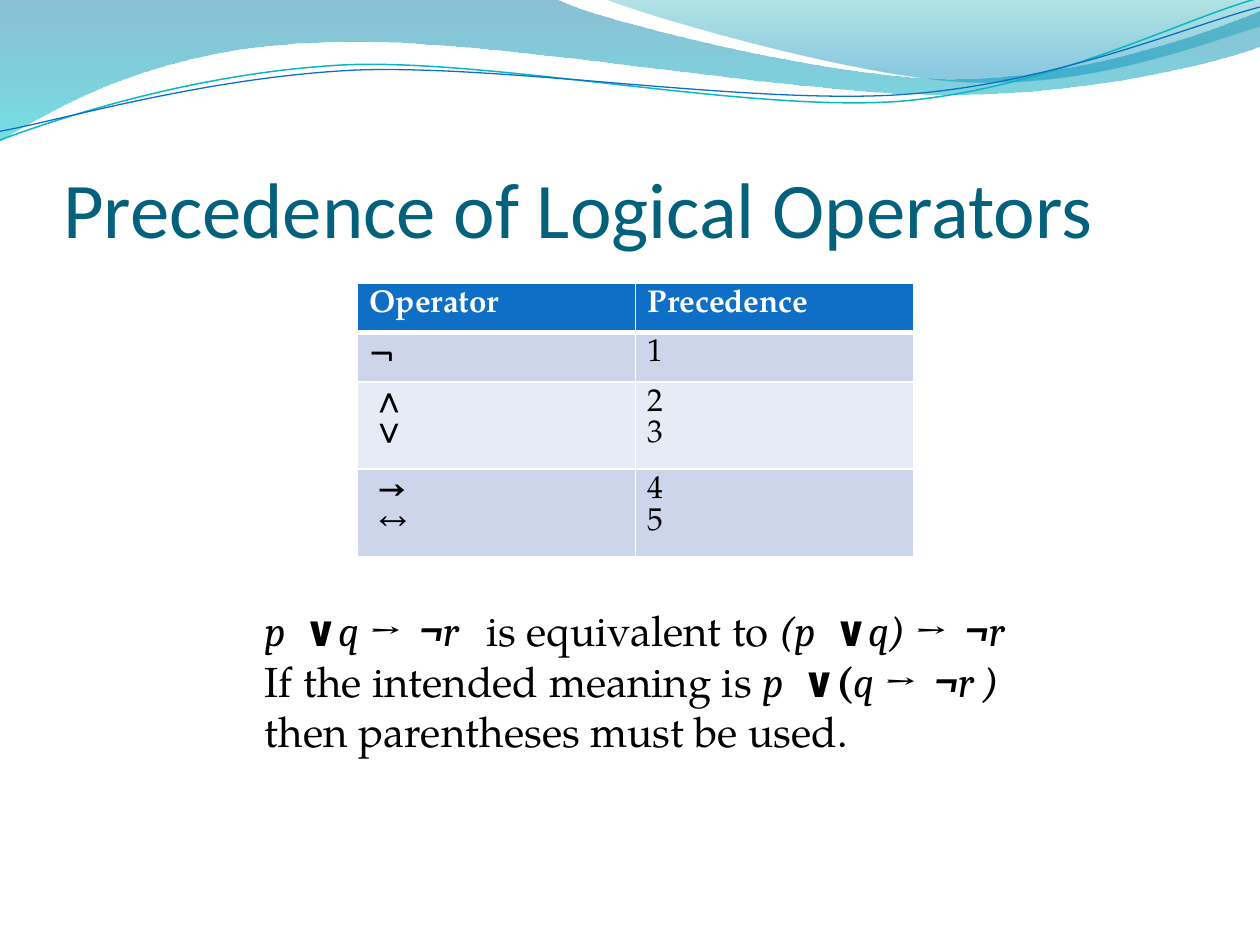
from lxml.etree import Element, SubElement
from pptx import Presentation
from pptx.dml.color import RGBColor
from pptx.enum.text import MSO_ANCHOR, PP_ALIGN
from pptx.oxml import parse_xml
from pptx.oxml.ns import nsdecls, qn
from pptx.util import Pt

SERIF, MATH, SANS = "TeX Gyre Pagella", "Cambria", "Calibri"
WHITE, BLACK, BLUE = "FFFFFF", "000000", "0F6FC6"

BROAD_WAVE = [
    [(0, 0)], [(317, -1)],
    [(343, 12), (478, 45), (546, 45)], [(614, 45), (690, 19), (720, 6)],
    [(721, 26)],
    [(708, 32), (626, 55), (537, 54)], [(447, 54), (275, 20), (185, 24)],
    [(93, 26), (33, 60), (-1, 81)],
]
SMALL_WAVE = [
    [(345, -1)],
    [(366, 8), (491, 45), (554, 47)], [(627, 50), (692, 23), (720, 15)],
    [(720, 0)],
]
TEAL_LINE = [
    [(0, 80)], [(35, 67), (114, 41), (199, 37)],
    [(284, 34), (427, 64), (513, 58)], [(600, 51), (675, 11), (719, -1)],
]
BLUE_LINE = [
    [(0, 75)], [(34, 69), (118, 44), (204, 40)],
    [(290, 37), (430, 60), (516, 54)], [(602, 48), (678, 15), (720, 4)],
]
OPERATOR_ROWS = [
    (28.2, BLUE, ["Operator"], ["Precedence"]),
    (28.2, "CCD5EA", ["¬"], ["1"]),
    (49.8, "E7EBF5", [" ∧", " ∨"], ["2", "3"]),
    (49.8, "CCD5EA", [" →", " ↔"], ["4", "5"]),
]
VARIABLE = {"font": MATH, "italic": True}
SYMBOL = {"font": MATH, "bold": True}
NEGATION = {**VARIABLE, "bold": True}
GAP = (" ", {**VARIABLE, "spacing": 5.3})
WIDE_GAP = (" ", {**VARIABLE, "spacing": 10.6})
IMPLIES_NOT = [("→", NEGATION), GAP, ("¬", NEGATION)]
EXPLANATION = [
    [("p", VARIABLE), GAP, ("∨", SYMBOL), ("q ", VARIABLE), *IMPLIES_NOT,
     ("r", VARIABLE), WIDE_GAP, ("is equivalent to ", {}),
     ("(p", VARIABLE), GAP, ("∨", SYMBOL), ("q) ", VARIABLE), *IMPLIES_NOT,
     ("r", VARIABLE)],
    [("If the intended meaning is ", {}), ("p", VARIABLE), GAP, ("∨(", SYMBOL),
     ("q ", VARIABLE), *IMPLIES_NOT, ("r )", VARIABLE)],
    [("then parentheses must be used.", {})],
]


def color(value):
    """Turn a hex string into a colour."""
    return RGBColor.from_string(value)


def add_text(para, text, size=24, font=SERIF, fill=BLACK, bold=False, italic=False,
             spacing=0):
    """Append a formatted span to a paragraph."""
    span = para.add_run()
    span.text = text
    span.font.size, span.font.name = Pt(size), font
    span.font.bold, span.font.italic = bold, italic
    span.font.color.rgb = color(fill)
    if spacing:
        span.font._element.set("spc", str(round(spacing * 100)))


def get_para(frame, index):
    """Return the first paragraph or add another one."""
    return frame.paragraphs[0] if index == 0 else frame.add_paragraph()


def bend_lines(shape, segments):
    """Merge the three lines of each cubic segment into one curve."""
    lines = iter(list(shape._element.iter(qn("a:lnTo"))))
    for segment in segments[1:]:
        group = [next(lines) for _ in segment]
        if len(group) == 3:
            curve = Element(qn("a:cubicBezTo"))
            group[0].addprevious(curve)
            for line in group:
                curve.append(line[0])
                line.getparent().remove(line)


def add_outline(page, segments, close):
    """Draw a curved freeform without a shadow."""
    points = [(Pt(x), Pt(y)) for segment in segments for x, y in segment]
    builder = page.shapes.build_freeform(*points[0])
    builder.add_line_segments(points[1:], close=close)
    shape = builder.convert_to_shape()
    bend_lines(shape, segments)
    shape.shadow.inherit = False
    return shape


def add_wave(page, segments, stops):
    """Add a wave with a translucent downward gradient."""
    wave = add_outline(page, segments, close=True)
    wave.line.fill.background()
    wave.fill.gradient()
    wave.fill.gradient_angle = 270
    for stop, (position, value, _) in zip(wave.fill.gradient_stops, stops):
        stop.position = position
        stop.color.rgb = color(value)
    tints = wave._element.spPr.iter(qn("a:srgbClr"))
    for tint, (_, _, opacity) in zip(tints, stops):
        SubElement(tint, qn("a:alpha")).set("val", str(opacity * 1000))


def add_wave_line(page, segments, value, width):
    """Add an open curved line."""
    curve = add_outline(page, segments, close=False)
    curve.fill.background()
    curve.line.color.rgb = color(value)
    curve.line.width = Pt(width)


def add_title(page, text):
    """Place and fill the title placeholder."""
    title = page.shapes.title
    title.left, title.top, title.width, title.height = Pt(36), Pt(55.5), Pt(648), Pt(90)
    frame = title.text_frame
    frame.vertical_anchor = MSO_ANCHOR.BOTTOM
    frame.margin_left = frame.margin_right = frame.margin_bottom = 0
    frame.paragraphs[0].alignment = PP_ALIGN.LEFT
    add_text(frame.paragraphs[0], text, size=45, font=SANS, fill="04617B")


def set_borders(cell, widths):
    """Give a cell white borders, with widths for left, right, top and bottom."""
    properties = cell._tc.get_or_add_tcPr()
    for index, (side, width) in enumerate(zip("LRTB", widths)):
        properties.insert(index, parse_xml(
            f'<a:ln{side} {nsdecls("a")} w="{Pt(width)}"><a:solidFill>'
            f'<a:srgbClr val="{WHITE}"/></a:solidFill></a:ln{side}>'))


def add_operator_table(page):
    """Add the table of operators and their precedence."""
    table = page.shapes.add_table(len(OPERATOR_ROWS), 2, Pt(204), Pt(162),
                                  Pt(318), Pt(156)).table
    for row, (height, fill, *texts) in enumerate(OPERATOR_ROWS):
        table.rows[row].height = Pt(height)
        header = row == 0
        for column, lines in enumerate(texts):
            cell = table.cell(row, column)
            cell.fill.solid()
            cell.fill.fore_color.rgb = color(fill)
            set_borders(cell, (1, 1, 3 if row == 1 else 1, 3 if header else 1))
            for index, line in enumerate(lines):
                add_text(get_para(cell.text_frame, index), line, size=18,
                         fill=WHITE if header else BLACK,
                         bold=header or (column == 0 and "↔" not in line))


def add_explanation(page):
    """Add the worked example below the table."""
    box = page.shapes.add_textbox(Pt(144), Pt(342), Pt(450), Pt(152.5))
    box.text_frame.word_wrap = True
    for index, spans in enumerate(EXPLANATION):
        para = get_para(box.text_frame, index)
        for text, style in spans:
            add_text(para, text, **style)


def main():
    """Build the slide and save the deck."""
    deck = Presentation()
    deck.slide_width, deck.slide_height = Pt(720), Pt(540)
    page = deck.slides.add_slide(deck.slide_layouts[5])
    add_wave(page, BROAD_WAVE, [(0, "0074A1", 45), (1, "00C6CF", 55)])
    add_wave(page, SMALL_WAVE, [(0, "00A1A9", 30), (0.8, "008BBF", 45)])
    add_wave_line(page, TEAL_LINE, "0AB8BF", 0.85)
    add_wave_line(page, BLUE_LINE, BLUE, 0.75)
    add_title(page, "Precedence of Logical Operators")
    add_operator_table(page)
    add_explanation(page)
    deck.save("out.pptx")


if __name__ == "__main__":
    main()
